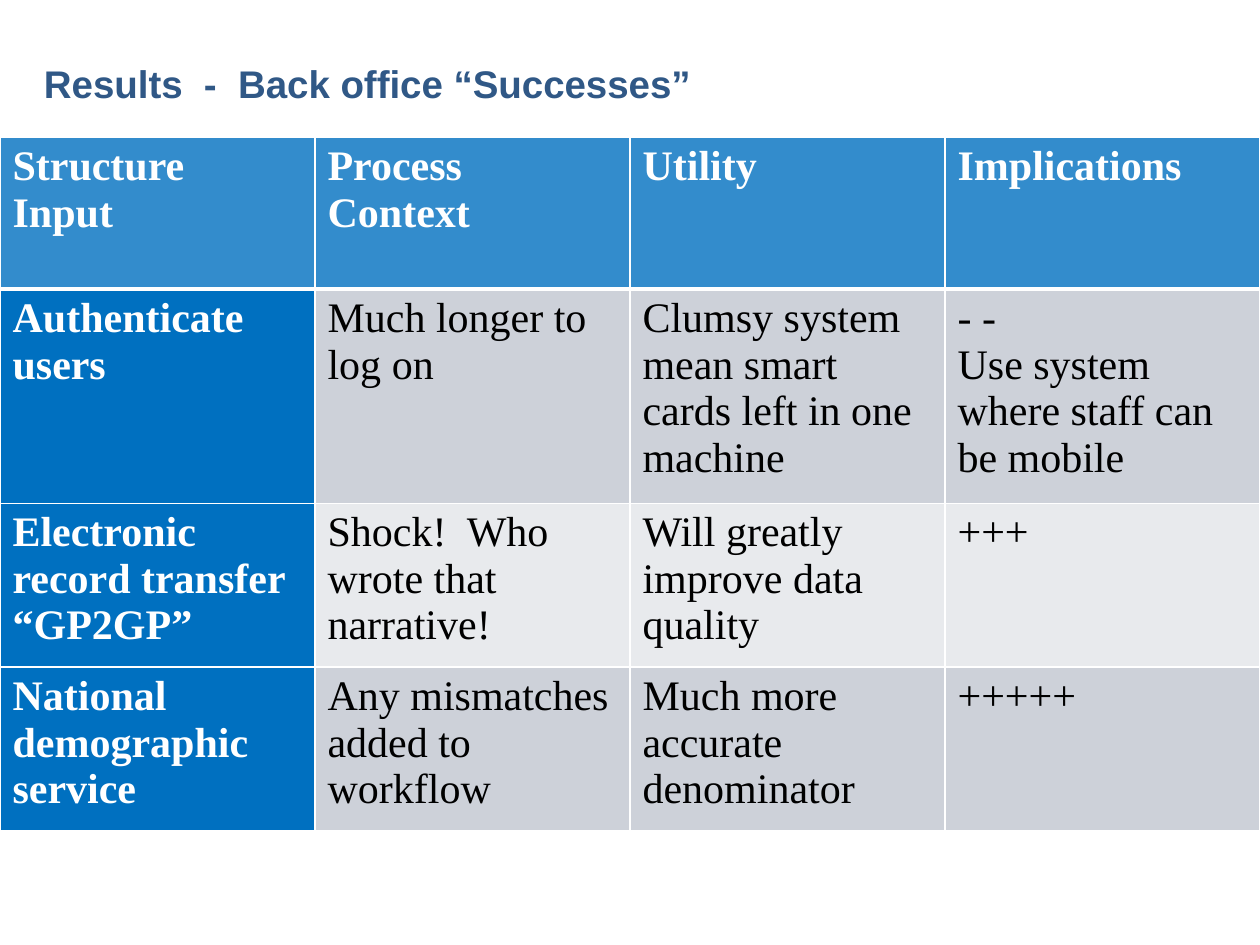
import pptx
import pptx.dml.color
import pptx.enum.text
import pptx.oxml
import pptx.oxml.ns
import pptx.util

PX = pptx.util.Inches(1) / 126
COLORS = {
    "title": "305886",
    "blue": "0070C0",
    "band_dark": "CDD1D9",
    "band_light": "E8EAED",
    "white": "FFFFFF",
    "black": "000000",
}
ROWS = [
    ["Structure\nInput", "Process\nContext", "Utility", "Implications"],
    ["Authenticate users", "Much longer to log on",
     "Clumsy system mean smart cards left in one machine",
     "- -\nUse system where staff can be mobile"],
    ["Electronic record transfer “GP2GP”", "Shock!  Who wrote that narrative!",
     "Will greatly improve data quality", "+++"],
    ["National demographic service", "Any mismatches added to workflow",
     "Much more accurate denominator", "+++++"],
]
COL_WIDTH = 315
ROW_HEIGHTS = [152, 131, 131, 131]


def px(n):
    return pptx.util.Emu(round(n * PX))


def write(tf, text, *, font, size, color, bold=False):
    """Fill a text frame, one paragraph for each line of text."""
    tf.word_wrap = True
    for i, line in enumerate(text.split("\n")):
        p = tf.paragraphs[0] if i == 0 else tf.add_paragraph()
        r = p.add_run()
        r.text = line
        r.font.name = font
        r.font.size = pptx.util.Pt(size)
        r.font.bold = bold
        r.font.color.rgb = pptx.dml.color.RGBColor.from_string(COLORS[color])


prs = pptx.Presentation()
prs.slide_width, prs.slide_height = px(1260), px(945)
s = prs.slides.add_slide(prs.slide_layouts[6])

# Title
tf = s.shapes.add_textbox(px(44), px(55), px(942), px(98)).text_frame
tf.margin_left = tf.margin_right = tf.margin_bottom = 0
tf.margin_top = px(5)
tf.vertical_anchor = pptx.enum.text.MSO_ANCHOR.TOP
write(tf, "Results  -  Back office “Successes”",
      font="Arial", size=22, color="title", bold=True)

# Results table
table = s.shapes.add_table(len(ROWS), len(ROWS[0]), px(0), px(137),
                           px(COL_WIDTH * len(ROWS[0])), px(sum(ROW_HEIGHTS))).table
table.first_col = True
table.horz_banding = False
for col in table.columns:
    col.width = px(COL_WIDTH)
for row, height in zip(table.rows, ROW_HEIGHTS):
    row.height = px(height)

for i, row in enumerate(ROWS):
    for j, text in enumerate(row):
        cell = table.cell(i, j)
        is_heading = i == 0 or j == 0
        write(cell.text_frame, text, font="Times New Roman", size=24,
              color="white" if is_heading else "black", bold=is_heading)

        # The rule between the header and the body is thicker
        tc_pr = cell._tc.get_or_add_tcPr()
        for side in "LRTB":
            heavy = (i, side) in [(0, "B"), (1, "T")]
            width = pptx.util.Pt(3 if heavy else 1)
            tc_pr.append(pptx.oxml.parse_xml(
                f'<a:ln{side} {pptx.oxml.ns.nsdecls("a")} w="{width}"><a:solidFill>'
                f'<a:srgbClr val="{COLORS["white"]}"/></a:solidFill></a:ln{side}>'))

        band = "band_dark" if i % 2 else "band_light"
        fill = COLORS["blue" if is_heading else band]
        cell.fill.solid()
        cell.fill.fore_color.rgb = pptx.dml.color.RGBColor.from_string(fill)
        if i == 0:
            clr = tc_pr.find(pptx.oxml.ns.qn("a:solidFill"))[0]
            clr.append(pptx.oxml.parse_xml(
                f'<a:alpha {pptx.oxml.ns.nsdecls("a")} val="80000"/>'))

prs.save("out.pptx")
